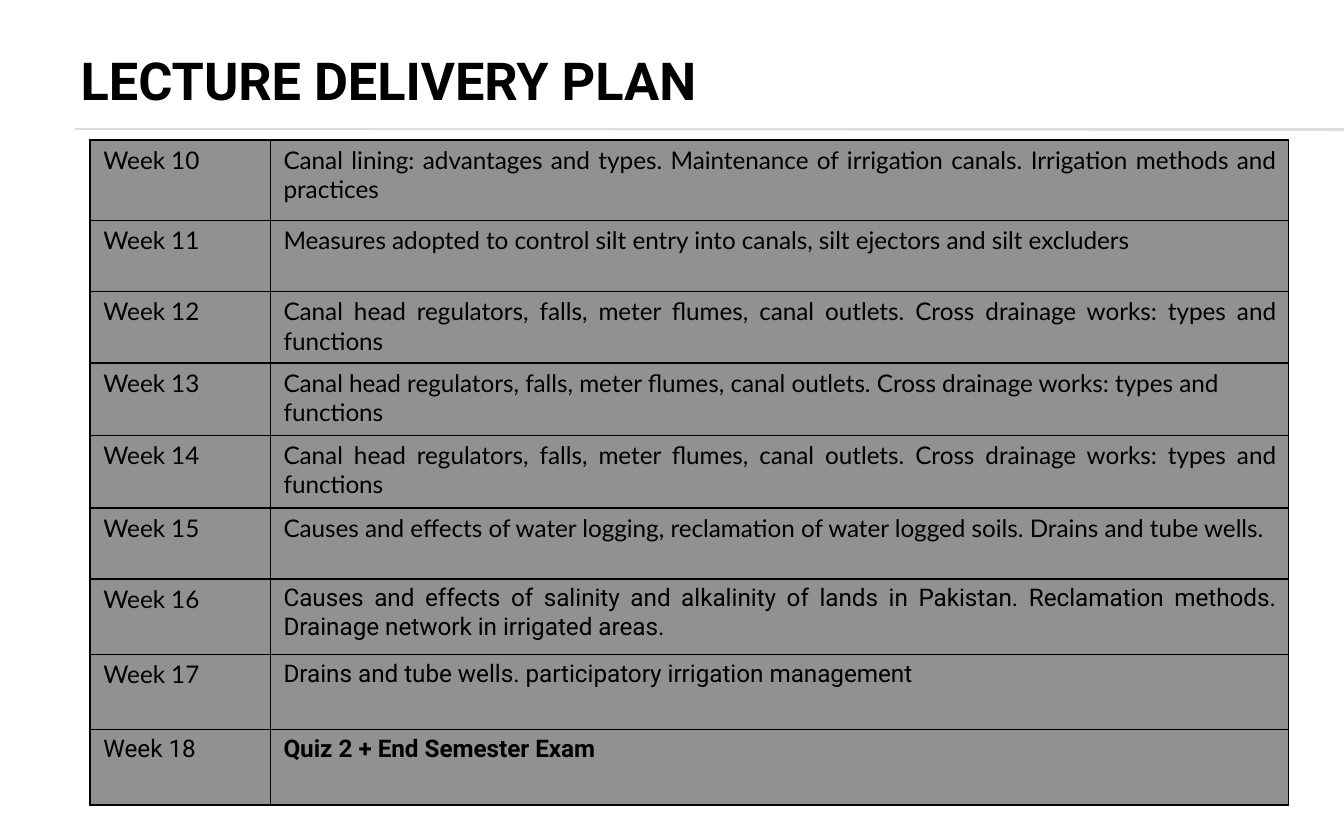
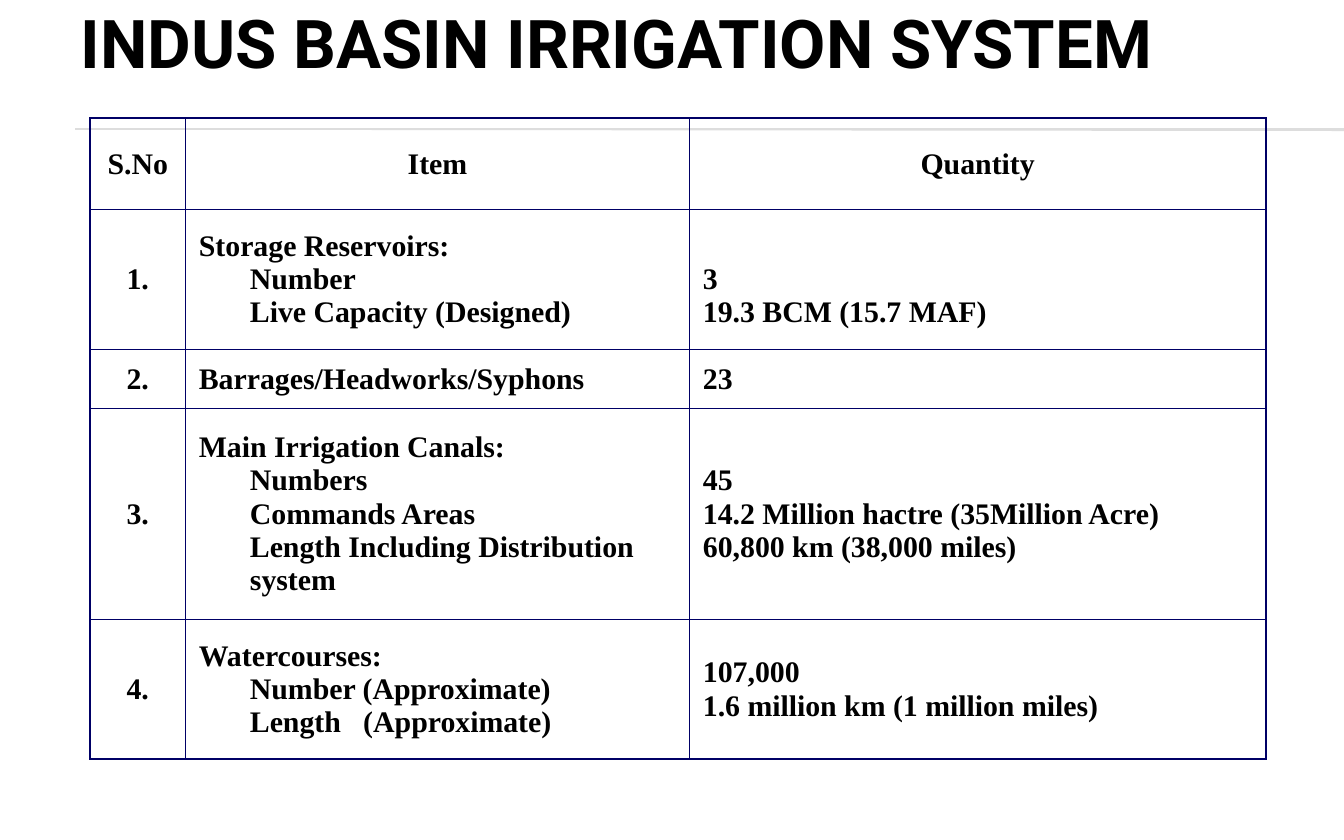
from copy import deepcopy
from pptx import Presentation
from pptx.dml.color import RGBColor as RGB
from pptx.enum.text import MSO_ANCHOR as ANCHOR, MSO_AUTO_SIZE as AUTO, PP_ALIGN as ALIGN
from pptx.oxml import parse_xml
from pptx.oxml.ns import nsdecls
from pptx.util import Inches, Pt
from lxml import etree

COLORS = {"text": "000000", "rule": "DDDDDD", "cell": "919191", "navy": "000066"}


def add_text(p, text, **fmt):
    """Write text into a paragraph; a newline becomes a line break."""
    for i, line in enumerate(text.split("\n")):
        if i:
            p.add_line_break()
            p._p[-1].append(deepcopy(r._r.rPr))
        r = p.add_run()
        r.text = line
        r.font.color.rgb = RGB.from_string(COLORS["text"])
        for name, value in fmt.items():
            setattr(r.font, name, value)


def add_grid(s, left, top, cols, rows, line, widths, fill=None):
    """Add a table with ruled cells; widths gives the border points per side."""
    table = s.shapes.add_table(len(rows), len(cols), Inches(left), Inches(top),
                               Inches(sum(cols)), Inches(sum(rows))).table
    table.first_row = table.horz_banding = False
    for col, w in zip(table.columns, cols):
        col.width = Inches(w)
    for row, h in zip(table.rows, rows):
        row.height = Inches(h)
    for cell in table.iter_cells():
        cell.margin_left = cell.margin_right = Inches(0.1)
        cell.margin_top = cell.margin_bottom = Inches(0.04)
        tcPr = cell._tc.get_or_add_tcPr()
        for side, w in widths.items():
            tcPr.append(parse_xml(
                f'<a:ln{side} {nsdecls("a")} w="{Pt(w)}"><a:solidFill>'
                f'<a:srgbClr val="{COLORS[line]}"/></a:solidFill></a:ln{side}>'))
        if fill:
            cell.fill.solid()
            cell.fill.fore_color.rgb = RGB.from_string(COLORS[fill])
        else:
            cell.fill.background()
    return table


prs = Presentation()
prs.slide_width, prs.slide_height = Inches(10), Inches(6.25)
layout = prs.slide_layouts[5]

# Slides and titles
titles = [("LECTURE DELIVERY PLAN", 0.21, 0.76, 28),
          ("INDUS BASIN IRRIGATION SYSTEM", 0, 0.62, 36)]
for text, top, height, size in titles:
    s = prs.slides.add_slide(layout)
    sp = s.shapes.title
    sp.left, sp.top, sp.width, sp.height = map(Inches, (0.5, top, 9, height))
    tf = sp.text_frame
    for name, value in {"word_wrap": True, "auto_size": AUTO.NONE,
                        "vertical_anchor": ANCHOR.MIDDLE}.items():
        setattr(tf, name, value)
    p = tf.paragraphs[0]
    p.alignment = ALIGN.LEFT
    add_text(p, text, size=Pt(size), name="Roboto", bold=True)
plan, indus = prs.slides

# Rules under the title, kept on the shared layout
for end_y in (0.96, 0.97):
    rule = plan.shapes.add_connector(1, Inches(0.56), Inches(0.96), Inches(10), Inches(end_y))
    rule.line.color.rgb = RGB.from_string(COLORS["rule"])
    rule.line.width = Pt(0.75)
    etree.SubElement(rule._element.spPr,
                     "{http://schemas.openxmlformats.org/drawingml/2006/main}effectLst")
    layout.shapes._spTree.append(rule._element)

# Weekly plan: topic, week font, topic font
regulators = ("Canal head regulators, falls, meter flumes, canal outlets. "
              "Cross drainage works: types and functions")
weeks = [
    ("Canal lining: advantages and types. Maintenance of irrigation canals. "
     "Irrigation methods and practices", "Lato", "Lato"),
    ("Measures adopted to control silt entry into canals, silt ejectors and silt excluders",
     "Lato", "Lato"),
    (regulators, "Lato", "Lato"),
    (regulators, "Lato", "Lato"),
    (regulators, "Lato", "Lato"),
    ("Causes and effects of water logging, reclamation of water logged soils. "
     "Drains and tube wells. ", "Lato", "Lato"),
    ("Causes and effects of salinity and alkalinity of lands in Pakistan. "
     "Reclamation methods. Drainage network in irrigated areas.", "Lato", "Roboto"),
    ("Drains and tube wells. participatory irrigation management", "Lato", "Roboto"),
    ("Quiz 2 + End Semester Exam", "Roboto", "Roboto"),
]
table = add_grid(plan, 0.67, 1.04, [1.34, 7.58],
                 [0.6, 0.53, 0.53, 0.54, 0.54, 0.53, 0.56, 0.56, 0.56],
                 "text", {"L": 0.75, "R": 0.75, "T": 1, "B": 1}, "cell")
for i, (topic, week_font, topic_font) in enumerate(weeks):
    week = 10 + i
    add_text(table.cell(i, 0).text_frame.paragraphs[0], f"Week {week}",
             size=Pt(13), name=week_font)
    p = table.cell(i, 1).text_frame.paragraphs[0]
    p.alignment = ALIGN.LEFT if week == 13 else ALIGN.JUSTIFY
    add_text(p, topic, size=Pt(13), name=topic_font, bold=week == 18)

# Irrigation system: each cell is a list of paragraphs
items = [
    (["S.No"], ["Item"], ["Quantity"]),
    (["1."], ["Storage Reservoirs:\nNumber\nLive Capacity (Designed)"],
     ["3", "19.3 BCM (15.7 MAF)"]),
    (["2."], ["Barrages/Headworks/Syphons"], ["23"]),
    (["3."], ["Main Irrigation Canals:\nNumbers\nCommands Areas\n"
              "Length Including Distribution system"],
     ["45", "14.2 Million hactre (35Million Acre)", "60,800 km (38,000 miles)"]),
    (["4."], ["Watercourses:\nNumber (Approximate)\nLength   (Approximate)"],
     ["107,000", "1.6 million km (1 million miles)"]),
]
table = add_grid(indus, 0.67, 0.88, [0.71, 3.75, 4.29], [0.68, 1.04, 0.44, 1.57, 1.04],
                 "navy", dict.fromkeys("LRTB", 1))
for i, row in enumerate(items):
    for j, paragraphs in enumerate(row):
        cell = table.cell(i, j)
        cell.vertical_anchor = ANCHOR.MIDDLE
        tf = cell.text_frame
        for k, text in enumerate(paragraphs):
            p = tf.add_paragraph() if k else tf.paragraphs[0]
            p.alignment = ALIGN.CENTER if i == 0 or j == 0 else ALIGN.LEFT
            pPr = p._p.get_or_add_pPr()
            pPr.set("marL", str(Inches(0.38)))
            pPr.set("indent", str(Inches(-0.38)))
            add_text(p, text, size=Pt(16), name="Times New Roman", bold=True)
# Quantities of the reservoirs start level with their second line
table.cell(1, 2).margin_top = Inches(0.29)

prs.save("out.pptx")
